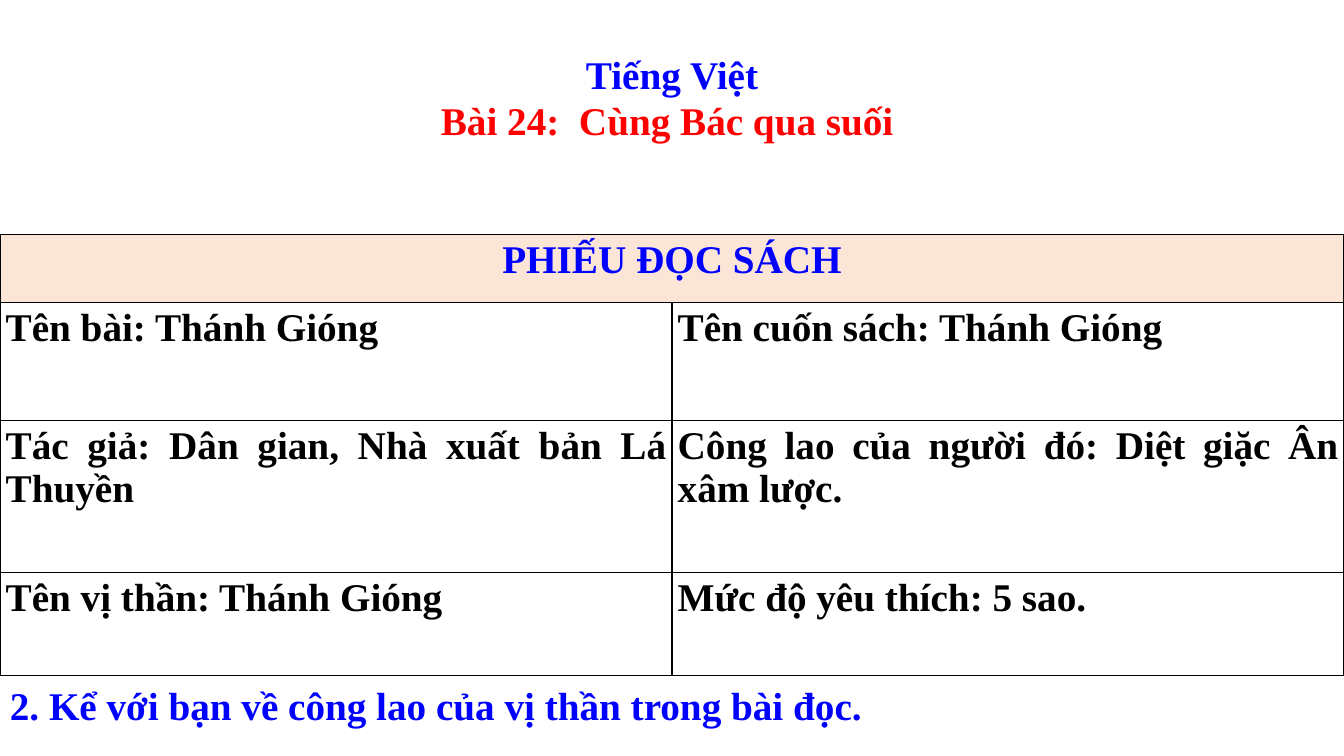
"""Build the reading-sheet slide: two heading lines, a table and a task line."""
import lxml.etree
import pptx
import pptx.dml.color
import pptx.enum.text
import pptx.oxml.ns
import pptx.util

Pt = pptx.util.Pt
ALIGN = pptx.enum.text.PP_ALIGN
BLUE = pptx.dml.color.RGBColor(0, 0, 255)
RED = pptx.dml.color.RGBColor(255, 0, 0)
BLACK = pptx.dml.color.RGBColor(0, 0, 0)
PEACH = pptx.dml.color.RGBColor(0xFB, 0xE5, 0xD6)

SLIDE_WIDTH, SLIDE_HEIGHT = 960, 540
LINE_HEIGHT = 41.2
TABLE_TOP = 167.5
ROW_HEIGHTS = [48.6, 84.2, 108.6, 73.6]

LINES = [
    ("Tiếng Việt", 32.6, SLIDE_WIDTH, BLUE, ALIGN.CENTER),
    ("Bài 24:  Cùng Bác qua suối ", 65.3, SLIDE_WIDTH, RED, ALIGN.CENTER),
    ("2. Kể với bạn về công lao của vị thần trong bài đọc.",
     483, 937, BLUE, ALIGN.JUSTIFY),
]
SHEET_TITLE = "PHIẾU ĐỌC SÁCH"
SHEET_ROWS = [
    ("Tên bài: Thánh Gióng", "Tên cuốn sách: Thánh Gióng"),
    ("Tác giả: Dân gian, Nhà xuất bản Lá Thuyền",
     "Công lao của người đó: Diệt giặc Ân xâm lược."),
    ("Tên vị thần: Thánh Gióng", "Mức độ yêu thích: 5 sao."),
]


def write(frame, words, color, alignment):
    paragraph = frame.paragraphs[0]
    paragraph.alignment = alignment
    run = paragraph.add_run()
    run.text = words
    run.font.name = "Times New Roman"
    run.font.size = Pt(28)
    run.font.bold = True
    run.font.color.rgb = color


def add_borders(cell):
    properties = cell._tc.get_or_add_tcPr()
    qn = pptx.oxml.ns.qn
    for side in ("a:lnL", "a:lnR", "a:lnT", "a:lnB"):
        border = lxml.etree.SubElement(properties, qn(side), w=str(Pt(1)))
        fill = lxml.etree.SubElement(border, qn("a:solidFill"))
        lxml.etree.SubElement(fill, qn("a:srgbClr"), val=str(BLACK))


def add_sheet(slide):
    table = slide.shapes.add_table(
        len(ROW_HEIGHTS), 2, 0, Pt(TABLE_TOP),
        Pt(SLIDE_WIDTH), Pt(sum(ROW_HEIGHTS))).table
    table.first_row = False
    table.horz_banding = False
    for row, height in zip(table.rows, ROW_HEIGHTS):
        row.height = Pt(height)
    for cell in table.iter_cells():
        cell.margin_left = cell.margin_right = Pt(4.1)
        cell.margin_top = cell.margin_bottom = Pt(2.9)
        add_borders(cell)
        cell.fill.background()
    title = table.cell(0, 0)
    title.merge(table.cell(0, 1))
    title.fill.solid()
    title.fill.fore_color.rgb = PEACH
    write(title.text_frame, SHEET_TITLE, BLUE, ALIGN.CENTER)
    for row_index, entries in enumerate(SHEET_ROWS, start=1):
        for column_index, entry in enumerate(entries):
            cell = table.cell(row_index, column_index)
            write(cell.text_frame, entry, BLACK, ALIGN.JUSTIFY)


def main():
    deck = pptx.Presentation()
    deck.slide_width, deck.slide_height = Pt(SLIDE_WIDTH), Pt(SLIDE_HEIGHT)
    slide = deck.slides.add_slide(deck.slide_layouts[6])
    add_sheet(slide)
    for words, top, width, color, alignment in LINES:
        frame = slide.shapes.add_textbox(
            0, Pt(top), Pt(width), Pt(LINE_HEIGHT)).text_frame
        frame.word_wrap = True
        frame.auto_size = pptx.enum.text.MSO_AUTO_SIZE.SHAPE_TO_FIT_TEXT
        write(frame, words, color, alignment)
    deck.save("out.pptx")


if __name__ == "__main__":
    main()
